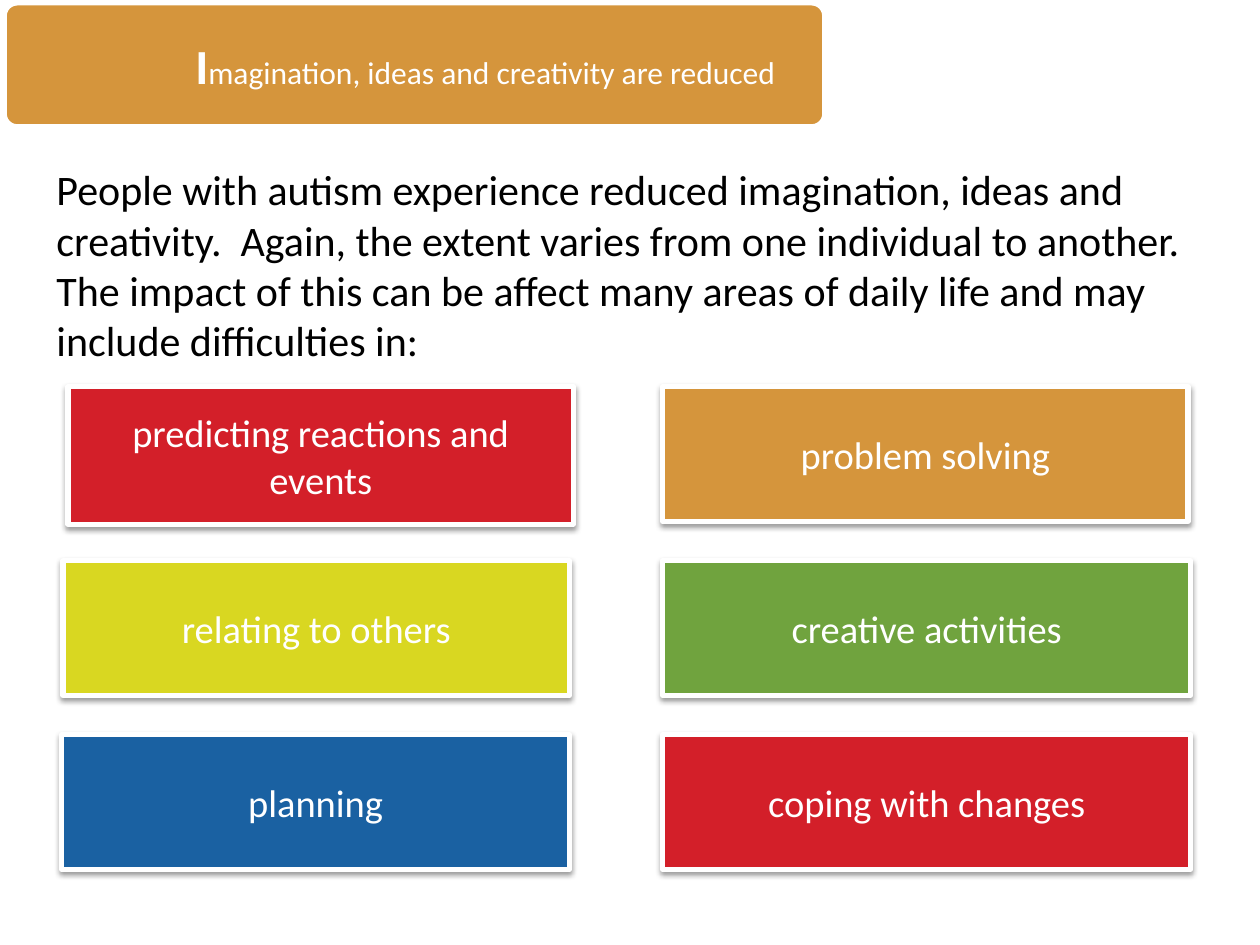
"""Build a slide on reduced imagination, ideas and creativity in autism."""
from lxml import etree
from pptx import Presentation
from pptx.dml.color import RGBColor
from pptx.enum.shapes import MSO_SHAPE
from pptx.enum.text import MSO_ANCHOR, PP_ALIGN
from pptx.util import Inches, Pt

RECTANGLE = MSO_SHAPE.RECTANGLE
ROUNDED = MSO_SHAPE.ROUNDED_RECTANGLE
MIDDLE = MSO_ANCHOR.MIDDLE
CENTER = PP_ALIGN.CENTER
WHITE, BLACK = "FFFFFF", "000000"
RED, ORANGE, YELLOW = "D31F29", "D5953C", "D9D721"
GREEN, BLUE = "70A33E", "1A61A2"
SHADOW = (
    '<a:outerShdw xmlns:a="http://schemas.openxmlformats.org/drawingml/2006/main"'
    ' blurRad="40000" dist="20000" dir="5400000" rotWithShape="0">'
    '<a:srgbClr val="000000"><a:alpha val="38000"/></a:srgbClr></a:outerShdw>'
)


def color(value):
    return RGBColor.from_string(value)


def format_run(run, size, value, bold=False):
    run.font.name = "Calibri"
    run.font.size = Pt(size)
    run.font.bold = bold
    run.font.color.rgb = color(value)


presentation = Presentation()
presentation.slide_width = Inches(10)
presentation.slide_height = Inches(7.5)
slide = presentation.slides.add_slide(presentation.slide_layouts[6])

intro = slide.shapes.add_textbox(Inches(0.35), Inches(1.25), Inches(9.3), Inches(1.72))
intro.text_frame.word_wrap = True
intro.text_frame.text = (
    "People with autism experience reduced imagination, ideas and creativity.  "
    "Again, the extent varies from one individual to another.  The impact of this "
    "can be affect many areas of daily life and may include difficulties in:"
)
format_run(intro.text_frame.paragraphs[0].runs[0], 24, BLACK)

difficulties = [
    ("predicting reactions and events", RED, 0.54, 4.01, 1.09),
    ("relating to others", YELLOW, 0.5, 4.02, 1.07),
    ("planning", BLUE, 0.49, 4.03, 1.07),
    ("problem solving", ORANGE, 5.26, 4.17, 1.07),
    ("creative activities", GREEN, 5.26, 4.19, 1.07),
    ("coping with changes", RED, 5.26, 4.19, 1.07),
]
for index, (label, fill, left, width, height) in enumerate(difficulties):
    top = 3.07 + 1.38 * (index % 3)
    shape = slide.shapes.add_shape(
        RECTANGLE, Inches(left), Inches(top), Inches(width), Inches(height)
    )
    shape.fill.solid()
    shape.fill.fore_color.rgb = color(fill)
    shape.line.color.rgb = color(WHITE)
    shape.line.width = Pt(3)
    shape.shadow.inherit = False
    shape.element.spPr.find("{*}effectLst").append(etree.fromstring(SHADOW))
    shape.text_frame.word_wrap = True
    shape.text_frame.vertical_anchor = MIDDLE
    shape.text_frame.text = label
    paragraph = shape.text_frame.paragraphs[0]
    paragraph.alignment = CENTER
    format_run(paragraph.runs[0], 22, WHITE)

banner = slide.shapes.add_shape(
    ROUNDED, Inches(0.04), Inches(0.03), Inches(6.5), Inches(0.97)
)
banner.adjustments[0] = 0.1
banner.fill.solid()
banner.fill.fore_color.rgb = color(ORANGE)
banner.line.color.rgb = color(WHITE)
banner.line.width = Pt(2)
banner.shadow.inherit = False

title = slide.shapes.add_textbox(Inches(1.43), Inches(0.03), Inches(5.1), Inches(0.97))
frame = title.text_frame
frame.word_wrap = True
frame.vertical_anchor = MIDDLE
frame.margin_left = frame.margin_right = Inches(0.12)
frame.margin_top = frame.margin_bottom = Inches(0.12)
title_runs = [
    ("I", 28, True),
    ("magination, ideas and creativity are reduced", 18, False),
]
for text, size, bold in title_runs:
    run = frame.paragraphs[0].add_run()
    run.text = text
    format_run(run, size, WHITE, bold)

presentation.save("out.pptx")
